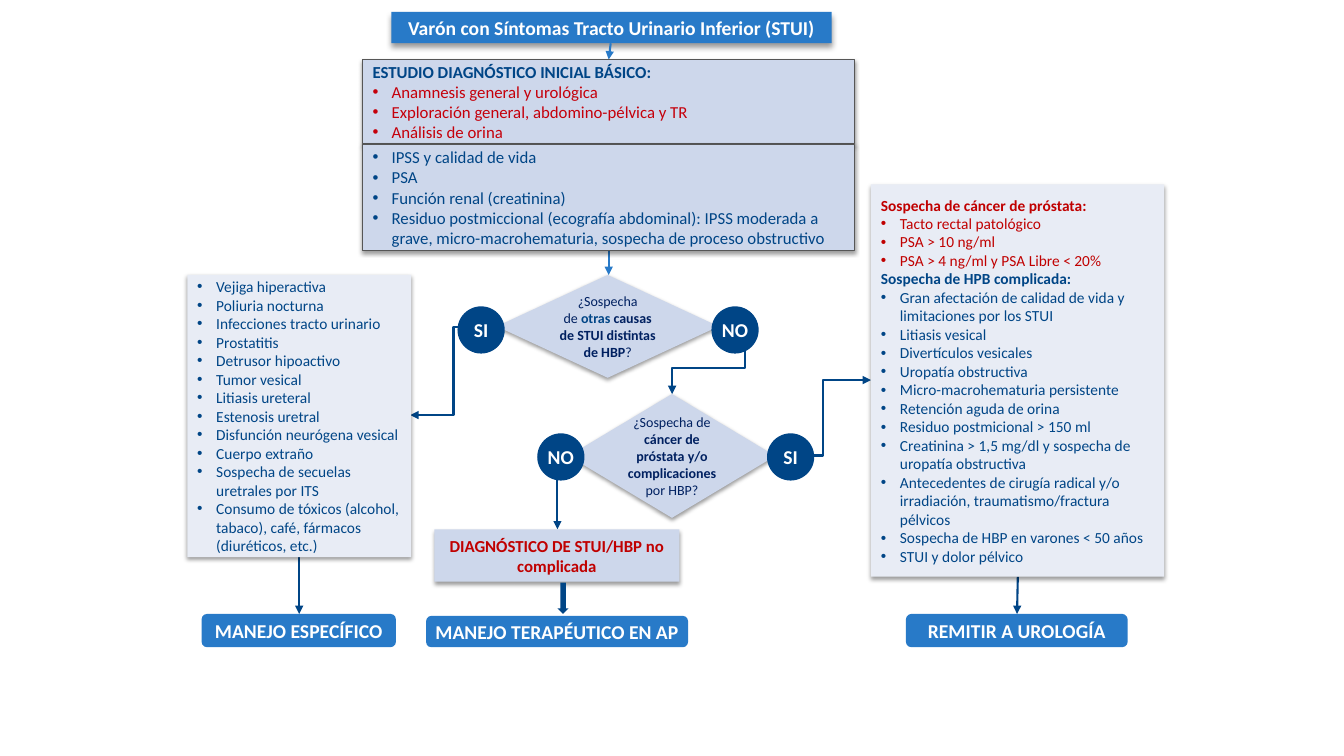
from lxml import etree
from pptx import Presentation
from pptx import util as u
from pptx.dml.color import RGBColor
from pptx.enum import shapes, text
from pptx.oxml import ns

WHITE = RGBColor(0xFF, 0xFF, 0xFF)
BLUE = RGBColor(0x28, 0x7A, 0xC8)
DARK = RGBColor(0x00, 0x45, 0x86)
NAVY = RGBColor(0x00, 0x20, 0x60)
PALE = RGBColor(0xCD, 0xD7, 0xEB)
MIST = RGBColor(0xE8, 0xEC, 0xF5)
GREY = RGBColor(0x56, 0x56, 0x56)
RED = RGBColor(0xC0, 0x00, 0x00)
CRIMSON = RGBColor(0xC5, 0x00, 0x0B)

SHAPE = shapes.MSO_SHAPE
SOFT_SHADOW = (3.1, 1.6, 38)
TITLE_SHADOW = (4, 3, 40)
TIGHT = (0.1, 0.1)
CIRCLE = 1.19


def child(parent, tag, **attributes):
    return etree.SubElement(parent, ns.qn(tag), {name: str(value) for name, value in attributes.items()})


def bullets(color, *lines):
    return [(True, [(line, {"color": color})]) for line in lines]


def plain(*runs):
    return [(False, list(runs))]


def heading(words, color):
    return plain((words, {"color": color, "bold": True}))


class Flowchart:
    font = "Calibri"
    indent = u.Cm(0.48)

    def __init__(self, presentation):
        self.slide = presentation.slides.add_slide(presentation.slide_layouts[5])

    def paint(self, shape, fill, line=None, shadow=None):
        shape.fill.solid()
        shape.fill.fore_color.rgb = fill
        if line is None:
            shape.line.fill.background()
        else:
            shape.line.color.rgb = line
            shape.line.width = u.Pt(0.75)
        properties = shape._element.spPr
        effects = properties.find(ns.qn("a:effectLst"))
        if effects is None:
            effects = child(properties, "a:effectLst")
        if shadow:
            blur, distance, opacity = shadow
            outer = child(effects, "a:outerShdw", blurRad=u.Pt(blur), dist=u.Pt(distance),
                          dir=5400000, algn="t", rotWithShape=0)
            child(child(outer, "a:srgbClr", val="000000"), "a:alpha", val=opacity * 1000)

    def fill_text(self, shape, paragraphs, size, align, margins=(0.25, 0.13)):
        frame = shape.text_frame
        side, edge = (u.Cm(margin) for margin in margins)
        settings = {"word_wrap": True, "auto_size": text.MSO_AUTO_SIZE.NONE,
                    "vertical_anchor": text.MSO_ANCHOR.MIDDLE, "margin_left": side,
                    "margin_right": side, "margin_top": edge, "margin_bottom": edge}
        for name, value in settings.items():
            setattr(frame, name, value)
        for index, (bulleted, runs) in enumerate(paragraphs):
            paragraph = frame.paragraphs[0] if index == 0 else frame.add_paragraph()
            paragraph.alignment = align
            if bulleted:
                properties = paragraph._p.get_or_add_pPr()
                properties.set("marL", str(self.indent))
                properties.set("indent", str(-self.indent))
                child(properties, "a:buFont", typeface="Arial")
                child(properties, "a:buChar", char="•")
            for words, style in runs:
                run = paragraph.add_run()
                run.text = words
                values = {"name": self.font, "size": u.Pt(size), "bold": style.get("bold", False)}
                for name, value in values.items():
                    setattr(run.font, name, value)
                run.font.color.rgb = style["color"]

    def title(self, box, words):
        shape = self.slide.shapes.title
        for name, value in zip(("left", "top", "width", "height"), box):
            setattr(shape, name, u.Cm(value))
        geometry = child(shape._element.spPr, "a:prstGeom", prst="roundRect")
        child(geometry, "a:avLst")
        self.paint(shape, BLUE, shadow=TITLE_SHADOW)
        self.fill_text(shape, heading(words, WHITE), 14, text.PP_ALIGN.CENTER)

    def block(self, kind, box, fill, line=None, shadow=None):
        shape = self.slide.shapes.add_shape(kind, *map(u.Cm, box))
        shape.shadow.inherit = False
        self.paint(shape, fill, line, shadow)
        return shape

    def panel(self, box, fill, paragraphs, size, line=None, align=text.PP_ALIGN.LEFT):
        shape = self.block(SHAPE.RECTANGLE, box, fill, line, SOFT_SHADOW)
        self.fill_text(shape, paragraphs, size, align)

    def outcome(self, box, words, margins=(0.25, 0.13)):
        shape = self.block(SHAPE.ROUNDED_RECTANGLE, box, BLUE)
        self.fill_text(shape, heading(words, WHITE), 14, text.PP_ALIGN.CENTER, margins)

    def question(self, box, paragraphs):
        shape = self.block(SHAPE.DIAMOND, box, PALE, shadow=SOFT_SHADOW)
        self.fill_text(shape, paragraphs, 10, text.PP_ALIGN.CENTER, TIGHT)

    def answer(self, left, top, words):
        shape = self.block(SHAPE.OVAL, (left, top, CIRCLE, CIRCLE), DARK)
        self.fill_text(shape, heading(words, WHITE), 14, text.PP_ALIGN.CENTER, (0, 0.1))

    def arrow(self, start, end, color=DARK, preset="line", adjustments=()):
        connector = self.slide.shapes.add_connector(
            shapes.MSO_CONNECTOR.STRAIGHT, *map(u.Cm, start + end))
        connector.line.color.rgb = color
        connector.line.width = u.Pt(1.5)
        properties = connector._element.spPr
        child(properties.find(ns.qn("a:ln")), "a:tailEnd", type="triangle")
        child(properties, "a:effectLst")
        geometry = properties.find(ns.qn("a:prstGeom"))
        geometry.set("prst", preset)
        guides = geometry.find(ns.qn("a:avLst"))
        for number, value in enumerate(adjustments, 1):
            child(guides, "a:gd", name=f"adj{number}", fmla=f"val {value}")


def main():
    presentation = Presentation()
    presentation.slide_width, presentation.slide_height = u.Cm(33.87), u.Cm(19.05)
    chart = Flowchart(presentation)

    chart.title((9.86, 0.3, 11.1, 0.79), "Varón con Síntomas Tracto Urinario Inferior (STUI)")
    chart.arrow((15.39, 1.09), (15.34, 1.5), BLUE)
    chart.arrow((15.34, 6.32), (15.34, 6.93), BLUE)

    chart.outcome((22.83, 15.47, 5.59, 0.84), "REMITIR A UROLOGÍA")
    chart.outcome((10.74, 15.52, 6.6, 0.79), "MANEJO TERAPÉUTICO EN AP", TIGHT)
    chart.outcome((5.08, 15.47, 4.9, 0.84), "MANEJO ESPECÍFICO")

    normal, strong = {"color": NAVY}, {"color": NAVY, "bold": True}
    chart.question((12.52, 6.93, 5.59, 2.59), plain(("¿Sospecha", normal)) + plain(
        ("de ", normal), ("otras", {"color": DARK, "bold": True}),
        (" causas de STUI distintas de HBP", strong), ("?", normal)))
    chart.question((14.33, 9.93, 5.21, 3.12), plain(("¿Sospecha de", normal)) + plain(
        ("cáncer de próstata y/o complicaciones ", strong), ("por HBP?", normal)))

    chart.arrow((25.65, 14.53), (25.63, 15.47))
    chart.arrow((7.54, 14.02), (7.54, 15.47))
    chart.arrow((12.52, 8.23), (10.34, 10.46), preset="bentConnector3", adjustments=(50000,))
    chart.arrow((19.53, 11.48), (21.95, 9.58), preset="bentConnector3", adjustments=(50000,))
    chart.arrow((18.14, 8.23), (16.94, 9.93), preset="bentConnector4", adjustments=(-52900, 61000))
    chart.arrow((14.33, 11.48), (14.05, 13.34), preset="bentConnector2")

    for left, top, words in ((11.53, 7.72, "SI"), (17.93, 7.72, "NO"),
                             (13.54, 10.92, "NO"), (19.33, 10.92, "SI")):
        chart.answer(left, top, words)

    chart.panel((9.14, 1.5, 12.4, 2.13), PALE,
                heading("ESTUDIO DIAGNÓSTICO INICIAL BÁSICO:", DARK) + bullets(
                    CRIMSON, "Anamnesis general y urológica",
                    "Exploración general, abdomino-pélvica y TR", "Análisis de orina"), 12, GREY)
    chart.panel((9.14, 3.63, 12.4, 2.69), PALE, bullets(
        DARK, "IPSS y calidad de vida", "PSA", "Función renal (creatinina)",
        "Residuo postmiccional (ecografía abdominal): IPSS moderada a grave, "
        "micro-macrohematuria, sospecha de proceso obstructivo"), 12, GREY)
    chart.panel((21.95, 4.65, 7.39, 9.88), MIST,
                heading("Sospecha de cáncer de próstata:", RED)
                + bullets(RED, "Tacto rectal patológico", "PSA > 10 ng/ml",
                          "PSA > 4 ng/ml y PSA Libre < 20%")
                + heading("Sospecha de HPB complicada:", DARK)
                + bullets(DARK, "Gran afectación de calidad de vida y limitaciones por los STUI",
                          "Litiasis vesical", "Divertículos vesicales", "Uropatía obstructiva",
                          "Micro-macrohematuria persistente", "Retención aguda de orina",
                          "Residuo postmicional > 150 ml",
                          "Creatinina > 1,5 mg/dl y sospecha de uropatía obstructiva",
                          "Antecedentes de cirugía radical y/o irradiación, "
                          "traumatismo/fractura pélvicos",
                          "Sospecha de HBP en varones < 50 años", "STUI y dolor pélvico"), 11)
    chart.panel((4.72, 6.93, 5.64, 7.11), MIST, bullets(
        DARK, "Vejiga hiperactiva", "Poliuria nocturna", "Infecciones tracto urinario",
        "Prostatitis", "Detrusor hipoactivo", "Tumor vesical", "Litiasis ureteral",
        "Estenosis uretral", "Disfunción neurógena vesical", "Cuerpo extraño",
        "Sospecha de secuelas uretrales por ITS",
        "Consumo de tóxicos (alcohol, tabaco), café, fármacos (diuréticos, etc.)"), 11)
    chart.panel((10.95, 13.34, 6.17, 1.32), PALE,
                heading("DIAGNÓSTICO DE STUI/HBP no complicada", RED), 12,
                align=text.PP_ALIGN.CENTER)
    chart.block(SHAPE.DOWN_ARROW, (14.05, 14.68, 0.28, 0.79), DARK)

    presentation.save("out.pptx")


if __name__ == "__main__":
    main()
